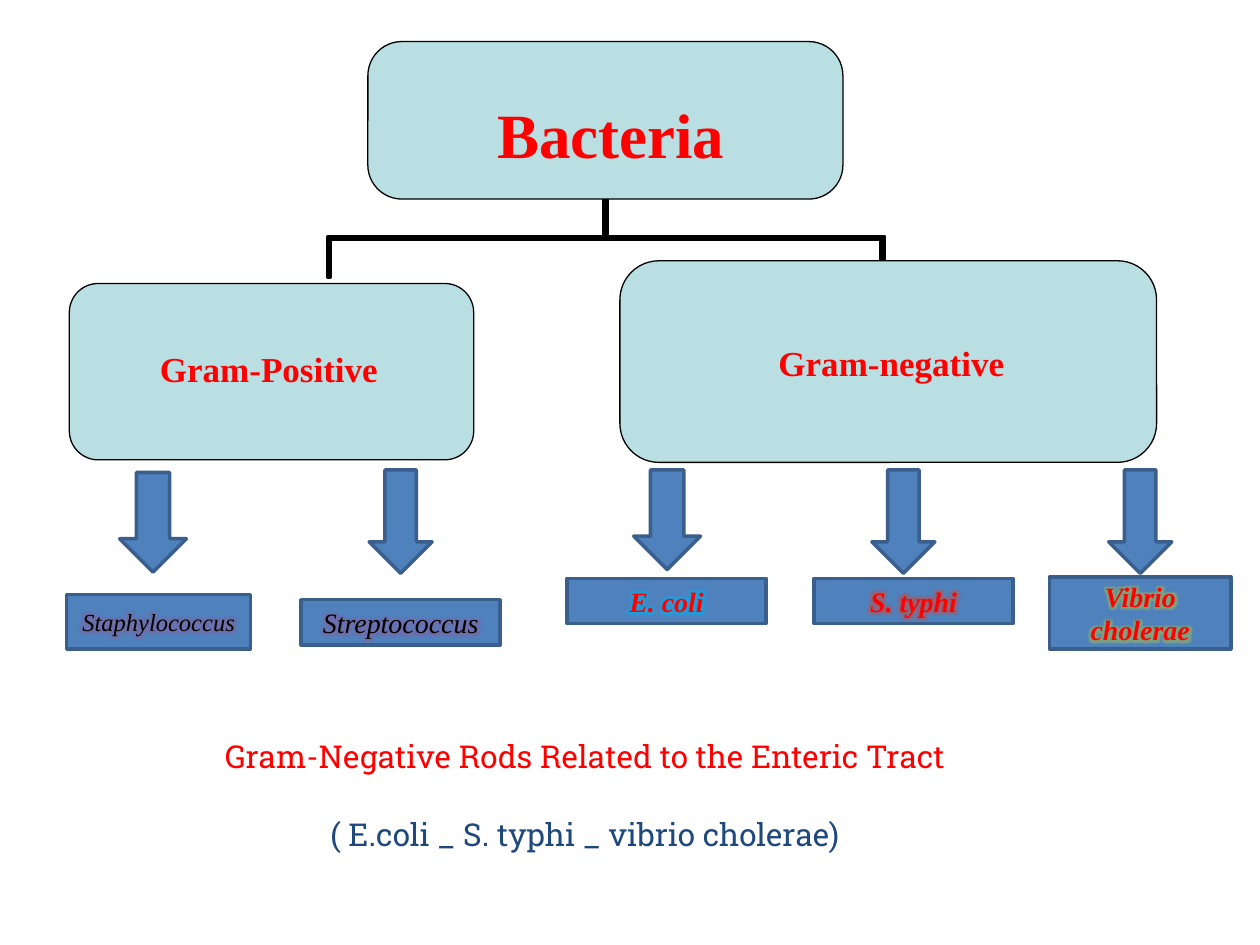
import pptx
import pptx.dml.color
import pptx.enum.shapes
import pptx.enum.text
import pptx.oxml
import pptx.oxml.ns
import pptx.util

Inches = pptx.util.Inches
Pt = pptx.util.Pt
RGBColor = pptx.dml.color.RGBColor
SHAPES = pptx.enum.shapes.MSO_SHAPE
ALIGN = pptx.enum.text.PP_ALIGN

COLORS = {
    "black": "000000", "red": "FF0000", "navy": "1F497D",
    "pale": "BADFE2", "blue": "4F81BD", "outline": "3A5F8C",
    "purple glow": "8064A2", "cyan glow": "00B0F0",
    "red glow": "C0504D", "green glow": "9BBB59",
}


def style_shape(shape, fill, line, width):
    shape.shadow.inherit = False
    shape.fill.solid()
    shape.fill.fore_color.rgb = RGBColor.from_string(COLORS[fill])
    shape.line.color.rgb = RGBColor.from_string(COLORS[line])
    shape.line.width = Pt(width)


def style_run(paragraph, size, color, font="Times New Roman", bold=False, italic=False):
    run = paragraph.runs[0]
    run.font.size = Pt(size)
    run.font.name = font
    run.font.bold = bold
    run.font.italic = italic
    run.font.color.rgb = RGBColor.from_string(COLORS[color])
    return run


presentation = pptx.Presentation()
presentation.slide_width = Inches(10)
presentation.slide_height = Inches(7.5)
slide = presentation.slides.add_slide(presentation.slide_layouts[6])
shapes = slide.shapes

# Bracket from Bacteria to the two groups: one thin elbow per side
elbows = [
    [(7.02, 2.2), (7.02, 1.88), (4.82, 1.88), (4.82, 1.58),
     (4.79, 1.58), (4.79, 1.9), (6.99, 1.9), (6.99, 2.2)],
    [(2.6, 2.2), (2.6, 1.88), (4.79, 1.88), (4.79, 1.58),
     (4.82, 1.58), (4.82, 1.9), (2.62, 1.9), (2.62, 2.2)],
]
bracket = None
for elbow in elbows:
    points = [(Inches(x), Inches(y)) for x, y in elbow]
    if bracket is None:
        bracket = shapes.build_freeform(*points[0])
    else:
        bracket.move_to(*points[0])
    bracket.add_line_segments(points[1:], close=True)
style_shape(bracket.convert_to_shape(), "black", "black", 2.25)

# Rounded boxes: left, top, width, height, corner radius
for left, top, width, height, radius in [
    (2.92, 0.33, 3.77, 1.25, 0.27),
    (0.55, 2.25, 3.21, 1.4, 0.23),
    (4.92, 2.07, 4.26, 1.6, 0.31),
]:
    box = shapes.add_shape(SHAPES.ROUNDED_RECTANGLE, Inches(left), Inches(top),
                           Inches(width), Inches(height))
    box.adjustments[0] = radius / height
    style_shape(box, "pale", "black", 0.75)

# Headings over the rounded boxes
for text, left, top, width, height, size, align in [
    ("Bacteria", 3.43, 0.68, 2.84, 0.71, 36, ALIGN.CENTER),
    ("Gram-Positive", 1.17, 2.68, 2.01, 0.44, 20, ALIGN.LEFT),
    ("Gram-negative", 6.08, 2.63, 2.39, 0.44, 20, ALIGN.LEFT),
]:
    heading = shapes.add_textbox(Inches(left), Inches(top), Inches(width), Inches(height))
    text_frame = heading.text_frame
    text_frame.word_wrap = True
    text_frame.margin_top = Inches(0.08)
    text_frame.text = text
    paragraph = text_frame.paragraphs[0]
    paragraph.alignment = align
    paragraph.space_before = Pt(0.9)
    style_run(paragraph, size, "red", bold=True)

# Arrows down to the species
for left, top, width, height in [
    (0.95, 3.75, 0.53, 0.79),
    (2.93, 3.73, 0.5, 0.82),
    (5.03, 3.73, 0.53, 0.79),
    (6.92, 3.73, 0.5, 0.82),
    (8.8, 3.73, 0.5, 0.82),
]:
    arrow = shapes.add_shape(SHAPES.DOWN_ARROW, Inches(left), Inches(top),
                             Inches(width), Inches(height))
    style_shape(arrow, "blue", "outline", 2)

# Species boxes with glowing names
for text, left, top, width, height, size, color, glow in [
    ("Staphylococcus", 0.53, 4.72, 1.46, 0.43, 14, "black", "purple glow"),
    ("Streptococcus", 2.39, 4.76, 1.58, 0.36, 16, "black", "purple glow"),
    ("E. coli", 4.5, 4.59, 1.58, 0.36, 16, "red", "cyan glow"),
    ("S. typhi", 6.46, 4.59, 1.58, 0.36, 16, "red", "red glow"),
    ("Vibrio cholerae", 8.33, 4.58, 1.44, 0.57, 16, "red", "green glow"),
]:
    species = shapes.add_shape(SHAPES.RECTANGLE, Inches(left), Inches(top),
                               Inches(width), Inches(height))
    style_shape(species, "blue", "outline", 2)
    text_frame = species.text_frame
    text_frame.word_wrap = True
    text_frame.vertical_anchor = pptx.enum.text.MSO_ANCHOR.MIDDLE
    text_frame.text = text
    paragraph = text_frame.paragraphs[0]
    paragraph.alignment = ALIGN.CENTER
    run = style_run(paragraph, size, color, bold=color == "red", italic=True)
    effect = pptx.oxml.parse_xml(
        f'<a:effectLst {pptx.oxml.ns.nsdecls("a")}><a:glow rad="101600">'
        f'<a:srgbClr val="{COLORS[glow]}"><a:alpha val="60000"/></a:srgbClr>'
        '</a:glow></a:effectLst>')
    fill = run.font._element.find(pptx.oxml.ns.qn("a:solidFill"))
    fill.addnext(effect)

# Closing lines
caption = shapes.add_textbox(Inches(0.55), Inches(5.7), Inches(8.25), Inches(1.12))
text_frame = caption.text_frame
text_frame.word_wrap = True
text_frame.margin_left = text_frame.margin_right = 0
text_frame.margin_top = text_frame.margin_bottom = 0
text_frame.text = ("Gram-Negative Rods Related to the Enteric Tract \n"
                   "( E.coli _ S. typhi _ vibrio cholerae) ")
for paragraph, color in zip(text_frame.paragraphs, ["red", "navy"]):
    paragraph.alignment = ALIGN.CENTER
    paragraph.line_spacing = 1.5
    paragraph.space_before = Pt(12.2)
    style_run(paragraph, 18, color, font="Roboto Slab")

presentation.save("out.pptx")
